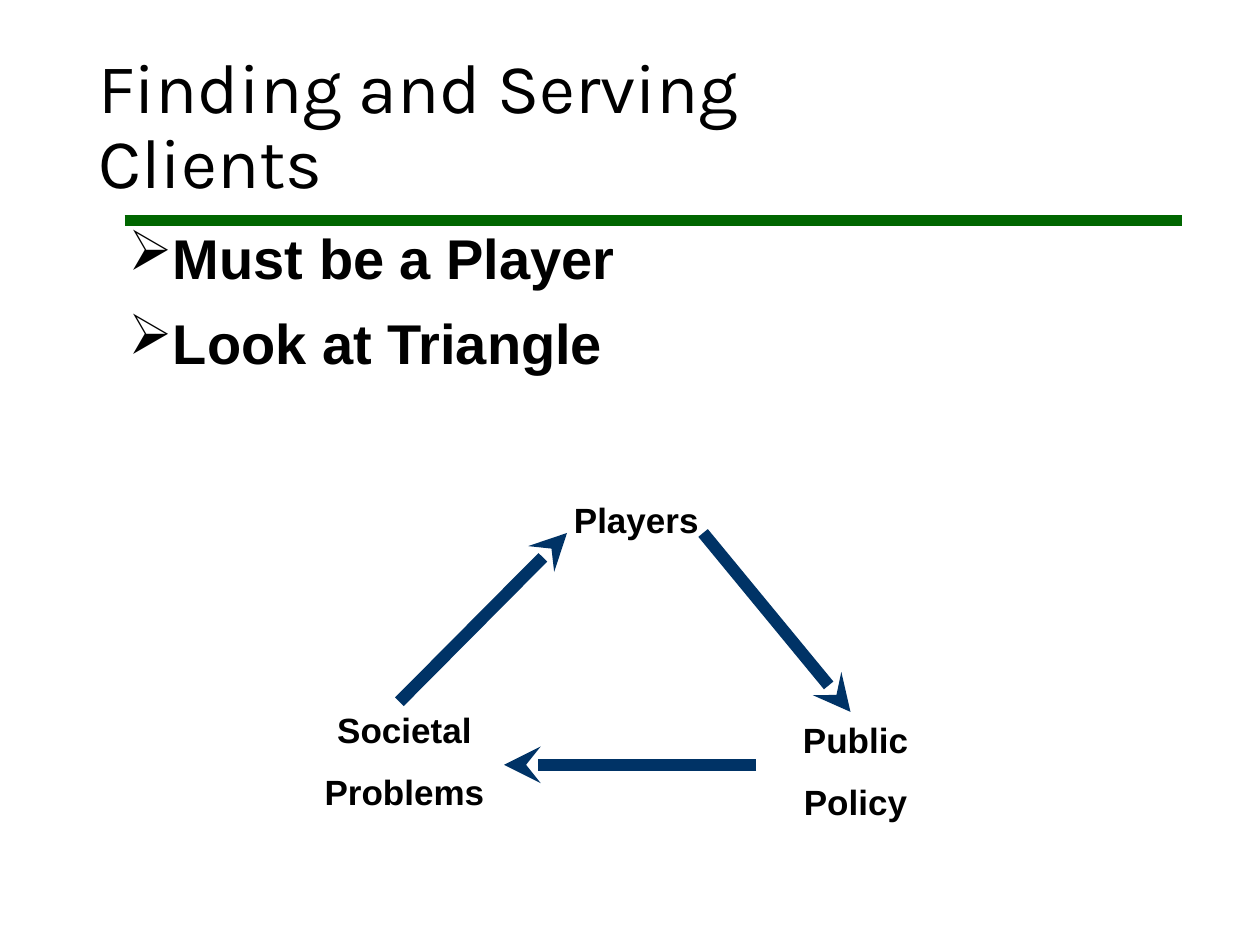
from lxml.etree import SubElement
from pptx import Presentation
from pptx.dml.color import RGBColor
from pptx.enum.shapes import MSO_CONNECTOR as Connector
from pptx.enum.text import MSO_ANCHOR as Anchor, PP_ALIGN as Align
from pptx.oxml.ns import qn
from pptx.util import Inches, Pt

BLACK = RGBColor(0x00, 0x00, 0x00)
GREEN = RGBColor(0x00, 0x66, 0x00)
NAVY = RGBColor(0x00, 0x33, 0x66)
WIDTH, HEIGHT = Inches(10), Inches(7.5)
COLUMNS, ROWS = 100, 75


class SlideBuilder:
    """Hold the style and the current slide; lengths are in grid columns and rows."""

    title_font, body_font = "Karla", "Arial"

    def __init__(self, deck):
        self.slide = deck.slides.add_slide(deck.slide_layouts[5])

    def across(self, columns):
        return round(WIDTH * columns / COLUMNS)

    def down(self, rows):
        return round(HEIGHT * rows / ROWS)

    def area(self, left, top, width, height):
        return self.across(left), self.down(top), self.across(width), self.down(height)

    def style(self, para, name, size, bold):
        for span in para.runs:
            span.font.name = name
            span.font.size = Pt(size)
            span.font.bold = bold
            span.font.color.rgb = BLACK

    def title(self, text, *area):
        box = self.slide.shapes.title
        box.left, box.top, box.width, box.height = self.area(*area)
        frame = box.text_frame
        frame.text = text
        frame.word_wrap = True
        frame.vertical_anchor = Anchor.BOTTOM
        para = frame.paragraphs[0]
        para.alignment = Align.LEFT
        para.line_spacing = 0.9
        self.style(para, self.title_font, 40, False)

    def text(self, lines, *area, size=20, gap=11.5, align=Align.CENTER, spacing=1.0, bullet=None):
        box = self.slide.shapes.add_textbox(*self.area(*area))
        frame = box.text_frame
        frame.word_wrap = True
        frame.text = "\n".join(lines)
        for index, para in enumerate(frame.paragraphs):
            para.alignment = align
            para.line_spacing = spacing
            if index:
                para.space_before = Pt(gap)
            if bullet:
                SubElement(para._p.get_or_add_pPr(), qn("a:buChar"), char=bullet)
            self.style(para, self.body_font, size, True)

    def line(self, start, end, color, width, arrow=False):
        (x1, y1), (x2, y2) = start, end
        line = self.slide.shapes.add_connector(
            Connector.STRAIGHT, self.across(x1), self.down(y1), self.across(x2), self.down(y2))
        line.line.color.rgb = color
        line.line.width = Pt(width)
        if arrow:
            SubElement(line.line._get_or_add_ln(), qn("a:tailEnd"), type="stealth")
        SubElement(line._element.spPr, qn("a:effectLst"))


def main():
    deck = Presentation()
    deck.slide_width, deck.slide_height = WIDTH, HEIGHT
    page = SlideBuilder(deck)
    page.line((9.9, 17.5), (93.8, 17.5), GREEN, 6)
    page.title("Finding and Serving Clients", 6.8, 4.2, 66.7, 12.5)
    page.text(["Must be a Player", "Look at Triangle"], 9.2, 18.3, 88.5, 12.2,
              size=32, gap=17.5, align=Align.LEFT, spacing=0.8, bullet="➢")
    page.text(["Players"], 40.1, 39.1, 20.8, 4.3)
    page.text(["Public", "Policy"], 55, 56.5, 25.8, 9.3)
    page.text(["Societal", "Problems"], 20, 55.7, 24.2, 9.3)
    for start, end in [((31.7, 55.7), (45, 42.3)),
                       ((55.8, 42.3), (67.5, 56.5)),
                       ((60, 60.7), (40, 60.7))]:
        page.line(start, end, NAVY, 7, arrow=True)
    deck.save("out.pptx")


if __name__ == "__main__":
    main()
